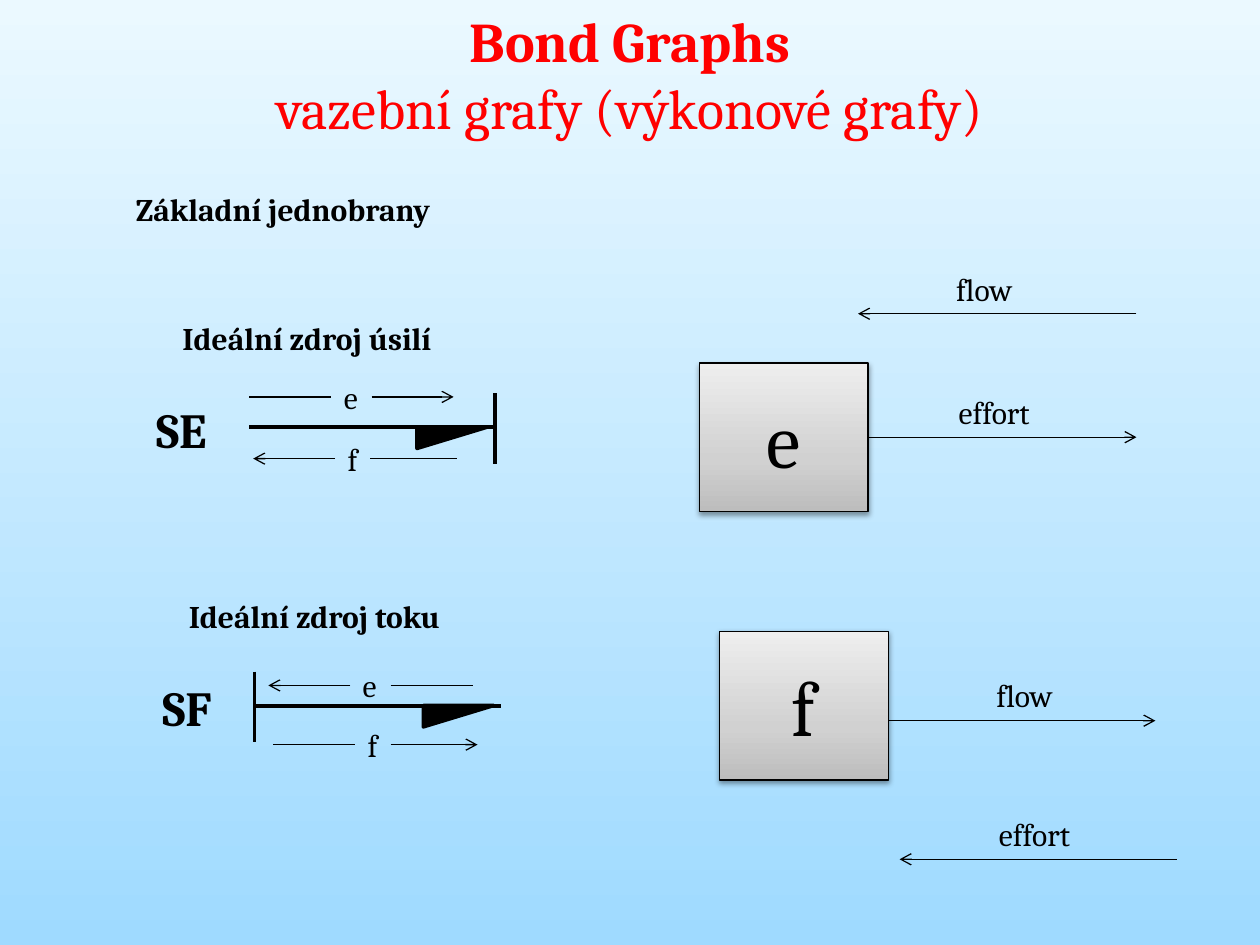
import copy

import lxml.etree
import pptx
import pptx.dml.color
import pptx.enum.shapes
import pptx.enum.text
import pptx.oxml
import pptx.oxml.ns
import pptx.util
from pptx.util import Inches

COLORS = {
    "ink": "000000",
    "title": "FF0000",
    "sky_top": "EBF9FF",
    "sky_bottom": "9FDAFF",
    "box_dark": "BDBDBD",
    "box_middle": "D1D1D1",
    "box_light": "EEEEEE",
}
FONT = "Cambria"
LABEL_HEIGHT = 0.4
LABEL_WIDTHS = {"e": 0.32, "f": 0.28, "flow": 0.68, "effort": 0.82}
BOX_WIDTH, BOX_HEIGHT = 1.34, 1.18


def rgb(name):
    """Return the named colour."""
    return pptx.dml.color.RGBColor.from_string(COLORS[name])


def set_font(paragraph, size, color="ink", bold=False):
    """Set the font of a whole paragraph."""
    paragraph.font.name = FONT
    paragraph.font.size = pptx.util.Pt(size)
    paragraph.font.bold = bold
    paragraph.font.color.rgb = rgb(color)


def set_gradient(fill, element, angle, stops):
    """Give a fill a linear gradient of (position, colour name) stops."""
    fill.gradient()
    fill.gradient_angle = angle
    stop_list = element.find(".//" + pptx.oxml.ns.qn("a:gsLst"))
    while len(stop_list) < len(stops):
        stop_list.append(copy.deepcopy(stop_list[-1]))
    for stop, (position, color) in zip(fill.gradient_stops, stops):
        stop.position = position
        stop.color.rgb = rgb(color)


def add_text(slide, left, top, width, height, text, size=18, bold=False):
    """Add a one-line label that does not wrap."""
    shape = slide.shapes.add_textbox(Inches(left), Inches(top), Inches(width), Inches(height))
    shape.text_frame.word_wrap = False
    shape.text_frame.auto_size = pptx.enum.text.MSO_AUTO_SIZE.SHAPE_TO_FIT_TEXT
    paragraph = shape.text_frame.paragraphs[0]
    paragraph.text = text
    set_font(paragraph, size, bold=bold)


def add_line(slide, start, end, width=0.75, arrow=False):
    """Add a straight line, with an arrowhead at its end if wanted."""
    line = slide.shapes.add_connector(
        pptx.enum.shapes.MSO_CONNECTOR.STRAIGHT, *[Inches(value) for value in (*start, *end)]
    )
    line.line.color.rgb = rgb("ink")
    line.line.width = pptx.util.Pt(width)
    properties = line.element.spPr
    if arrow:
        outline = properties.find(pptx.oxml.ns.qn("a:ln"))
        lxml.etree.SubElement(outline, pptx.oxml.ns.qn("a:tailEnd"), type="arrow")
    lxml.etree.SubElement(properties, pptx.oxml.ns.qn("a:effectLst"))


def add_title(slide, left, top, width, height):
    """Place the two-line title."""
    shape = slide.shapes.add_textbox(Inches(left), Inches(top), Inches(width), Inches(height))
    frame = shape.text_frame
    frame.word_wrap = True
    frame.auto_size = pptx.enum.text.MSO_AUTO_SIZE.SHAPE_TO_FIT_TEXT
    frame.text = "Bond Graphs\nvazební grafy (výkonové grafy)"
    for paragraph, bold in zip(frame.paragraphs, (True, False)):
        paragraph.alignment = pptx.enum.text.PP_ALIGN.CENTER
        set_font(paragraph, 32, "title", bold)


def add_split_arrow(slide, left, middle, letter, forward):
    """Draw an arrow interrupted by its letter."""
    gap_left = left + 0.65
    gap_right = gap_left + LABEL_WIDTHS[letter]
    right = left + 1.62
    add_text(slide, gap_left, middle - LABEL_HEIGHT / 2, LABEL_WIDTHS[letter], LABEL_HEIGHT, letter)
    if forward:
        add_line(slide, (left, middle), (gap_left, middle))
        add_line(slide, (gap_right, middle), (right, middle), arrow=True)
    else:
        add_line(slide, (gap_left, middle), (left, middle), arrow=True)
        add_line(slide, (gap_right, middle), (right, middle))


def add_bond(slide, left, top, caption, symbol, stroke, arrows):
    """Draw a source symbol with its half arrow, causal stroke and split arrows."""
    bond = top + 0.91
    add_text(slide, left + 0.21, top, 2.5, LABEL_HEIGHT, caption, bold=True)
    add_text(slide, left, top + 0.64, 0.74, 0.57, symbol, 28, True)
    add_line(slide, (left + 0.84, bond), (left + 2.79, bond), 2.25)
    barb = slide.shapes.add_shape(
        pptx.enum.shapes.MSO_SHAPE.RIGHT_TRIANGLE,
        Inches(left + 2.17), Inches(bond), Inches(0.56), Inches(0.17),
    )
    barb.element.spPr.xfrm.set("flipV", "1")
    barb.shadow.inherit = False
    barb.fill.solid()
    barb.fill.fore_color.rgb = rgb("ink")
    barb.line.color.rgb = rgb("ink")
    barb.line.width = pptx.util.Pt(2)
    add_line(slide, (left + stroke, top + 0.64), (left + stroke, top + 1.2), 2.25)
    for letter, offset, middle, forward in arrows:
        add_split_arrow(slide, left + offset, top + middle, letter, forward)


def add_block(slide, left, top, letter, ports):
    """Draw a source block with its labelled port arrows."""
    box = slide.shapes.add_shape(
        pptx.enum.shapes.MSO_SHAPE.RECTANGLE,
        Inches(left), Inches(top), Inches(BOX_WIDTH), Inches(BOX_HEIGHT),
    )
    stops = [(0, "box_dark"), (0.35, "box_middle"), (1, "box_light")]
    set_gradient(box.fill, box.element, 90, stops)
    box.line.color.rgb = rgb("ink")
    box.line.width = pptx.util.Pt(0.75)
    box.shadow.inherit = False
    effects = box.element.spPr.find(pptx.oxml.ns.qn("a:effectLst"))
    effects.append(pptx.oxml.parse_xml(
        f'<a:outerShdw {pptx.oxml.ns.nsdecls("a")} blurRad="40000" dist="20000" dir="5400000" '
        f'rotWithShape="0"><a:srgbClr val="{COLORS["ink"]}"><a:alpha val="38000"/></a:srgbClr>'
        "</a:outerShdw>"
    ))
    box.text_frame.vertical_anchor = pptx.enum.text.MSO_ANCHOR.MIDDLE
    paragraph = box.text_frame.paragraphs[0]
    paragraph.text = letter
    paragraph.alignment = pptx.enum.text.PP_ALIGN.CENTER
    set_font(paragraph, 44)
    for label, label_left, start, end, offset in ports:
        middle = top + offset
        add_line(slide, (left + start, middle), (left + end, middle), arrow=True)
        add_text(slide, left + label_left, middle - LABEL_HEIGHT,
                 LABEL_WIDTHS[label], LABEL_HEIGHT, label)


def main():
    """Build and save the slide."""
    presentation = pptx.Presentation()
    presentation.slide_width, presentation.slide_height = Inches(10), Inches(7.5)
    slide = presentation.slides.add_slide(presentation.slide_layouts[6])
    sky = [(0, "sky_top"), (1, "sky_bottom")]
    set_gradient(slide.background.fill, slide.element, 270, sky)
    add_title(slide, 0, 0, 10, 1.18)
    add_text(slide, 0.98, 1.46, 2.91, LABEL_HEIGHT, "Základní jednobrany", bold=True)
    add_bond(slide, 1.14, 2.48, "Ideální zdroj úsilí", "SE", 2.79,
             [("e", 0.84, 0.67, True), ("f", 0.87, 1.16, False)])
    add_bond(slide, 1.19, 4.69, "Ideální zdroj toku", "SF", 0.83,
             [("e", 0.94, 0.75, False), ("f", 0.98, 1.22, True)])
    add_block(slide, 5.55, 2.88, "e",
              [("effort", 1.96, BOX_WIDTH, 3.47, 0.59), ("flow", 1.94, 3.47, 1.26, -0.39)])
    add_block(slide, 5.71, 5.01, "f",
              [("flow", 2.1, BOX_WIDTH, 3.46, 0.71), ("effort", 2.12, 3.63, 1.43, 1.81)])
    presentation.save("out.pptx")


if __name__ == "__main__":
    main()
